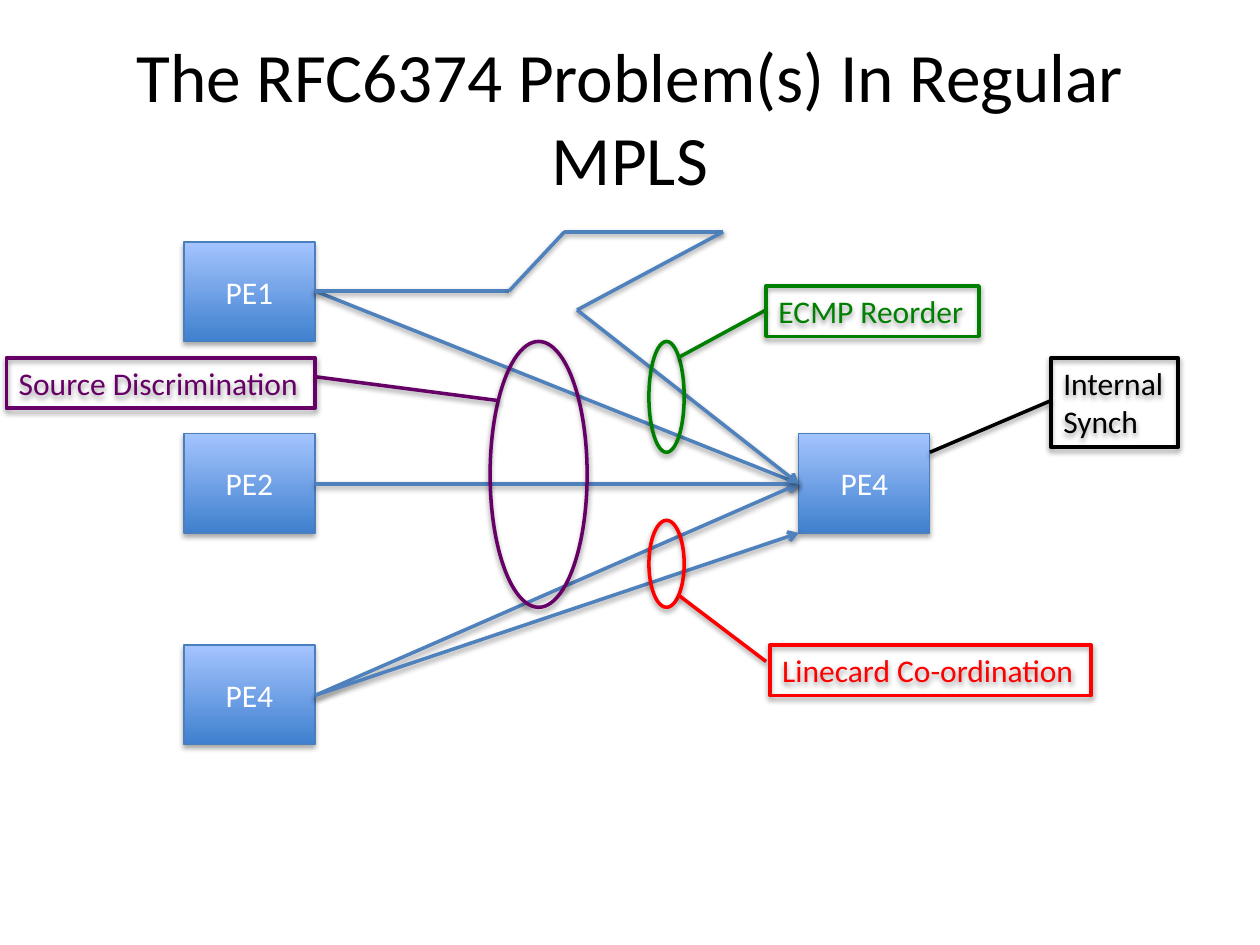
"""Build the slide on RFC6374 problems in regular MPLS."""
from lxml.etree import SubElement
from pptx import Presentation
from pptx.dml.color import RGBColor
from pptx.enum.shapes import MSO_CONNECTOR, MSO_SHAPE
from pptx.enum.text import MSO_ANCHOR, MSO_AUTO_SIZE, PP_ALIGN
from pptx.oxml.ns import qn
from pptx.util import Pt

PX = 9144
BLACK = RGBColor(0x00, 0x00, 0x00)
WHITE = RGBColor(0xFF, 0xFF, 0xFF)
BLUE = RGBColor(0x4F, 0x81, 0xBD)
EDGE = RGBColor(0x4B, 0x7E, 0xBC)
DEEP = RGBColor(0x3F, 0x80, 0xCE)
LIGHT = RGBColor(0xA4, 0xC4, 0xFF)
RED = RGBColor(0xFF, 0x00, 0x00)
PURPLE = RGBColor(0x66, 0x00, 0x66)
GREEN = RGBColor(0x00, 0x80, 0x00)


def outline(shape, color, width=2, dist=1.6, alpha=38):
    shape.line.color.rgb = color
    shape.line.width = Pt(width)
    effects = SubElement(shape.element.spPr, qn("a:effectLst"))
    shadow = SubElement(effects, qn("a:outerShdw"), blurRad=str(Pt(3.1)),
                        dist=str(Pt(dist)), dir="5400000", rotWithShape="0")
    tint = SubElement(shadow, qn("a:srgbClr"), val="000000")
    SubElement(tint, qn("a:alpha"), val=str(alpha * 1000))


def connect(start, end, color, arrow=False):
    line = shapes.add_connector(MSO_CONNECTOR.STRAIGHT, *[n * PX for n in start + end])
    outline(line, color)
    if arrow:
        SubElement(line.element.spPr.find(qn("a:ln")), qn("a:tailEnd"), type="arrow")


deck = Presentation()
deck.slide_width, deck.slide_height = 1000 * PX, 750 * PX
slide = deck.slides.add_slide(deck.slide_layouts[5])
shapes = slide.shapes

title = shapes.title
title.left, title.top, title.width, title.height = 50 * PX, 30 * PX, 900 * PX, 125 * PX
frame = title.text_frame
frame.text = "The RFC6374 Problem(s) In Regular MPLS"
frame.word_wrap = True
frame.vertical_anchor = MSO_ANCHOR.MIDDLE
para = frame.paragraphs[0]
para.alignment = PP_ALIGN.CENTER
para.font.name, para.font.size = "Calibri", Pt(39.6)
para.font.color.rgb = BLACK

for name, left, top in [("PE1", 146, 192), ("PE2", 146, 344),
                        ("PE4", 146, 512), ("PE4", 634, 344)]:
    node = shapes.add_shape(MSO_SHAPE.RECTANGLE, left * PX, top * PX, 104 * PX, 79 * PX)
    node.fill.gradient()
    node.fill.gradient_angle = 90
    for stop, color in zip(node.fill.gradient_stops, (DEEP, LIGHT)):
        stop.color.rgb = color
    outline(node, EDGE, 0.75, 1.8, 35)
    frame = node.text_frame
    frame.text = name
    frame.vertical_anchor = MSO_ANCHOR.MIDDLE
    para = frame.paragraphs[0]
    para.alignment = PP_ALIGN.CENTER
    para.font.name, para.font.size = "Calibri", Pt(18)
    para.font.color.rgb = WHITE

hub = (634, 384)
for start, end in [((250, 231), hub), ((250, 384), hub),
                   ((250, 552), hub), ((250, 552), (634, 423))]:
    connect(start, end, BLUE, True)

route = [(250, 231), (404, 231), (448, 184), (574, 184), (458, 246), hub]
for start, end in zip(route, route[1:]):
    connect(start, end, BLUE, end == hub)

for color, left, top, width, height in [(RED, 515, 413, 28, 69),
                                        (PURPLE, 389, 271, 77, 211),
                                        (GREEN, 515, 271, 28, 88)]:
    ring = shapes.add_shape(MSO_SHAPE.OVAL, left * PX, top * PX, width * PX, height * PX)
    ring.fill.background()
    outline(ring, color)

for text, color, left, top, width, height, start, end in [
    ("ECMP Reorder", GREEN, 608, 227, 169, 40, (538, 284), (608, 246)),
    ("Linecard Co-ordination", RED, 611, 512, 255, 40, (538, 472), (608, 525)),
    ("Source Discrimination", PURPLE, 5, 284, 245, 40, (396, 318), (250, 299)),
    ("Internal\nSynch", BLACK, 834, 284, 101, 71, (738, 359), (834, 318)),
]:
    connect(start, end, color)
    label = shapes.add_textbox(left * PX, top * PX, width * PX, height * PX)
    outline(label, color)
    frame = label.text_frame
    frame.text = text
    frame.word_wrap = False
    frame.auto_size = MSO_AUTO_SIZE.SHAPE_TO_FIT_TEXT
    for para in frame.paragraphs:
        para.font.name, para.font.size = "Calibri", Pt(18)
        para.font.color.rgb = color

deck.save("out.pptx")
